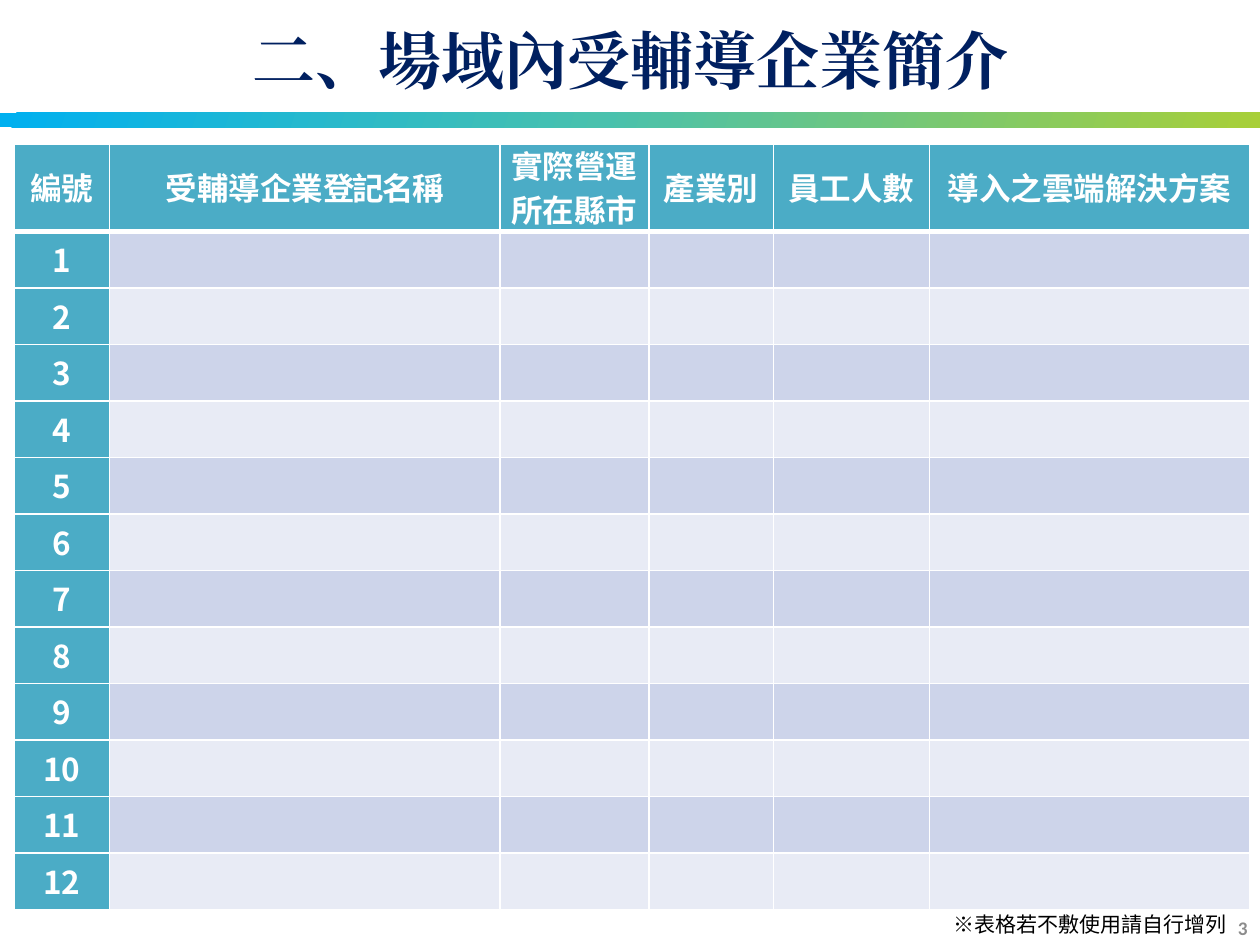
from lxml.etree import SubElement
from pptx import Presentation
from pptx.dml.color import RGBColor
from pptx.enum.shapes import MSO_SHAPE
from pptx.enum.text import MSO_ANCHOR, PP_ALIGN
from pptx.oxml import parse_xml
from pptx.oxml.ns import nsdecls, qn
from pptx.util import Cm, Pt

COLORS = {
    "title": "002060", "header": "4BACC6", "odd": "CDD4EA", "even": "E8EBF5",
    "white": "FFFFFF", "number": "8C8C8C", "note": "000000",
    "blue": "00B0F0", "teal": "49C1AD", "green": "A8CF38",
}
SANS = "Noto Sans CJK SC"
# Each heading is a list of lines.
HEADINGS = [["編號"], ["受輔導企業登記名稱"], ["實際營運", "所在縣市"],
            ["產業別"], ["員工人數"], ["導入之雲端解決方案"]]
TIGHT_TEXT = "登記名稱"
COLUMN_WIDTHS = [1.93, 7.87, 3, 2.51, 3.15, 6.45]
HEADER_HEIGHT, ROW_HEIGHT, ROW_COUNT = 1.63, 1.14, 12


def style_paragraph(para, size, color, font=SANS, bold=False, align=PP_ALIGN.CENTER):
    para.alignment = align
    para.font.size = Pt(size)
    para.font.bold = bold
    para.font.name = font
    para.font.color.rgb = RGBColor.from_string(COLORS[color])
    east_asian = SubElement(para.font._element, qn("a:ea"))
    east_asian.set("typeface", font)


def add_title(page, text):
    title = page.shapes.title
    title.left, title.top, title.width, title.height = 0, 0, Cm(25.4), Cm(2.39)
    title.text_frame.text = text
    title.text_frame.vertical_anchor = MSO_ANCHOR.MIDDLE
    style_paragraph(title.text_frame.paragraphs[0], 36, "title", "Times New Roman", True)


def add_gradient_bar(page):
    bar = page.shapes.add_shape(MSO_SHAPE.RECTANGLE, 0, Cm(2.27), Cm(25.4), Cm(0.3))
    bar.shadow.inherit = False
    bar.line.fill.background()
    stops = "".join(
        f'<a:gs pos="{position * 1000}"><a:srgbClr val="{COLORS[name]}"/></a:gs>'
        for position, name in [(0, "blue"), (48, "teal"), (100, "green")])
    gradient = parse_xml(
        f'<a:gradFill {nsdecls("a")} rotWithShape="1"><a:gsLst>{stops}</a:gsLst>'
        f'<a:lin ang="{18 * 60000}" scaled="0"/></a:gradFill>')
    bar._element.spPr.find(qn("a:prstGeom")).addnext(gradient)


def add_text(page, text, left, top, width, height, **style):
    box = page.shapes.add_textbox(Cm(left), Cm(top), Cm(width), Cm(height))
    box.text_frame.word_wrap = True
    box.text_frame.vertical_anchor = MSO_ANCHOR.MIDDLE
    box.text_frame.text = text
    style_paragraph(box.text_frame.paragraphs[0], **style)


def set_borders(cell, top, bottom):
    """Draw white borders, 1 pt at the sides; top and bottom are in points."""
    properties = cell._tc.get_or_add_tcPr()
    for index, (side, width) in enumerate([("L", 1), ("R", 1), ("T", top), ("B", bottom)]):
        properties.insert(index, parse_xml(
            f'<a:ln{side} {nsdecls("a")} w="{Pt(width)}"><a:solidFill>'
            f'<a:srgbClr val="{COLORS["white"]}"/></a:solidFill></a:ln{side}>'))


def format_cell(cell, fill, top=1, bottom=1):
    cell.fill.solid()
    cell.fill.fore_color.rgb = RGBColor.from_string(COLORS[fill])
    cell.vertical_anchor = MSO_ANCHOR.MIDDLE
    cell.margin_left = cell.margin_right = Cm(0.13)
    cell.margin_top = cell.margin_bottom = 0
    set_borders(cell, top, bottom)


def write_label(cell, lines):
    cell.text_frame.text = "\n".join(lines)
    for para in cell.text_frame.paragraphs:
        span = para.runs[0]
        if span.text.endswith(TIGHT_TEXT):
            span.text = span.text.removesuffix(TIGHT_TEXT)
            tight_span = para.add_run()
            tight_span.text = TIGHT_TEXT
            tight_span._r.get_or_add_rPr().set("spc", "-100")
        para.line_spacing = Pt(25)
        style_paragraph(para, 18, "white", bold=True)


def add_company_table(page):
    table = page.shapes.add_table(
        ROW_COUNT + 1, len(HEADINGS), Cm(0.28), Cm(2.9), Cm(sum(COLUMN_WIDTHS)),
        Cm(HEADER_HEIGHT + ROW_COUNT * ROW_HEIGHT)).table
    for column, width in zip(table.columns, COLUMN_WIDTHS):
        column.width = Cm(width)
    for row in table.rows:
        row.height = Cm(ROW_HEIGHT)
    table.rows[0].height = Cm(HEADER_HEIGHT)

    for column, lines in enumerate(HEADINGS):
        format_cell(table.cell(0, column), "header", bottom=3)
        write_label(table.cell(0, column), lines)
    for row in range(1, ROW_COUNT + 1):
        band = "odd" if row % 2 else "even"
        for column in range(len(HEADINGS)):
            format_cell(table.cell(row, column), band if column else "header",
                        top=3 if row == 1 else 1)
        write_label(table.cell(row, 0), [str(row)])


def main():
    deck = Presentation()
    deck.slide_width, deck.slide_height = Cm(25.4), Cm(19.05)
    page = deck.slides.add_slide(deck.slide_layouts[5])
    add_gradient_bar(page)
    add_title(page, "二、場域內受輔導企業簡介")
    add_text(page, "3", 19.48, 18.19, 5.92, 1.02, size=11, color="number",
             font="Calibri", bold=True, align=PP_ALIGN.RIGHT)
    add_company_table(page)
    add_text(page, "※表格若不敷使用請自行增列", 18.77, 18.24, 6.4, 0.76,
             size=12, color="note")
    deck.save("out.pptx")


if __name__ == "__main__":
    main()
